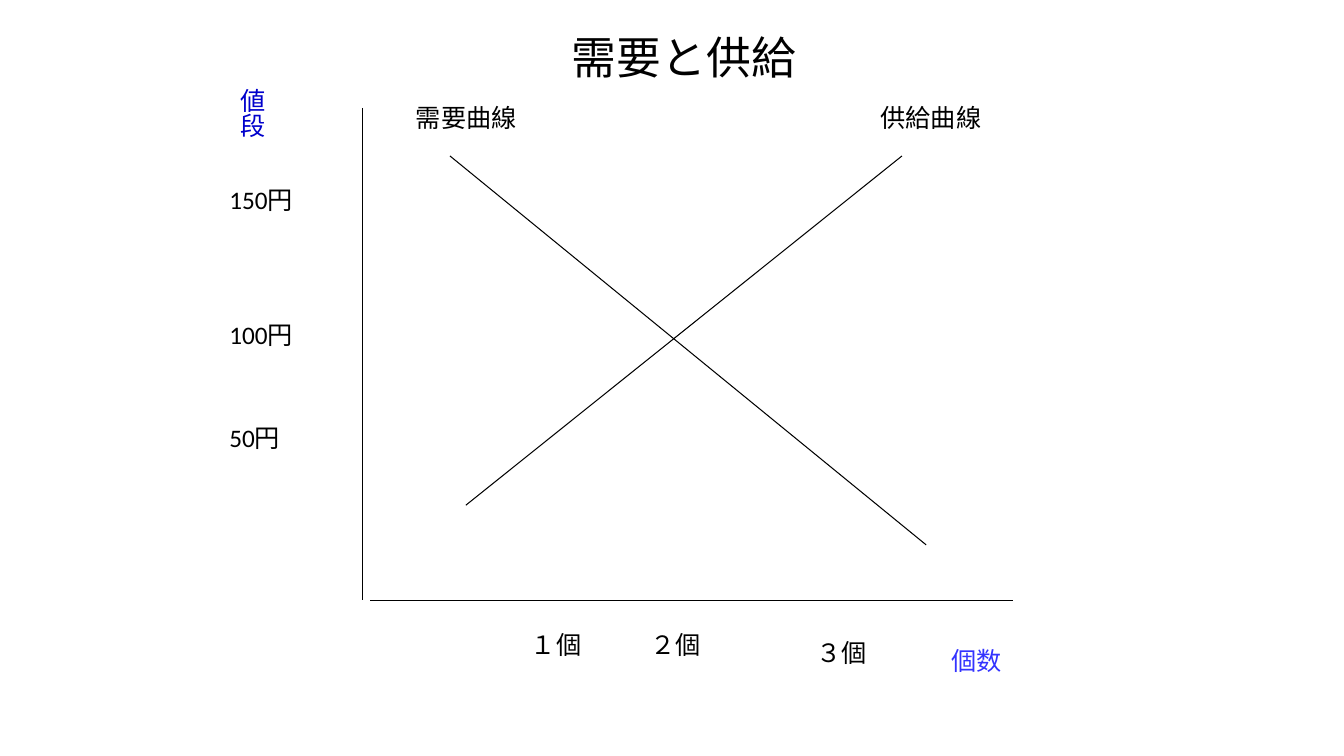
"""Build a supply and demand diagram slide."""
from lxml import etree
from pptx import Presentation
from pptx.dml.color import RGBColor
from pptx.enum.shapes import MSO_CONNECTOR
from pptx.enum.text import MSO_AUTO_SIZE, PP_ALIGN
from pptx.oxml.ns import qn
from pptx.util import Cm, Pt

STRAIGHT = MSO_CONNECTOR.STRAIGHT
FIT_SHAPE = MSO_AUTO_SIZE.SHAPE_TO_FIT_TEXT
LEFT, CENTER = PP_ALIGN.LEFT, PP_ALIGN.CENTER

COLORS = {"ink": "000000", "quantity": "3333FF", "price": "0000CC"}
FONT = "Calibri"
LABEL_HEIGHT = 1.02
PRICE_LEFT = 5.53
CURVE_LABEL_TOP = 2.46
AXIS_BOTTOM = 15.12
CURVE_TOP = 3.93

AXES = [(9.14, 2.72, 9.14, AXIS_BOTTOM), (9.33, AXIS_BOTTOM, 25.53, AXIS_BOTTOM)]
CURVES = [(11.74, 12.73, 22.73, CURVE_TOP), (11.34, CURVE_TOP, 23.34, 13.73)]
PRICES = [("150円", 4.52, 3), ("100円", 7.92, 3), ("50円", 10.52, 3.2)]
QUANTITIES = [("１個", 13.13, 15.74, 2.59), ("２個", 16.14, 15.74, 3), ("３個", 20.33, 15.93, 2.59)]
CURVE_LABELS = [("需要曲線", 10.23, 7.01), ("供給曲線", 21.94, 5.79)]


def add_text(slide, text, left, top, width, height=LABEL_HEIGHT, *,
             size=18, color="ink", align=LEFT, vertical=False):
    shape = slide.shapes.add_textbox(Cm(left), Cm(top), Cm(width), Cm(height))
    frame = shape.text_frame
    frame.word_wrap = True
    frame.auto_size = FIT_SHAPE
    if vertical:
        shape.element.txBody.find(qn("a:bodyPr")).set("vert", "eaVert")
    paragraph = frame.paragraphs[0]
    paragraph.alignment = align
    run = paragraph.add_run()
    run.text = text
    run.font.name = FONT
    run.font.size = Pt(size)
    run.font.color.rgb = RGBColor.from_string(COLORS[color])


def add_line(slide, points):
    connector = slide.shapes.add_connector(STRAIGHT, *map(Cm, points))
    connector.line.color.rgb = RGBColor.from_string(COLORS["ink"])
    connector.line.width = Pt(0.75)
    etree.SubElement(connector.element.spPr, qn("a:effectLst"))


def main():
    presentation = Presentation()
    presentation.slide_width, presentation.slide_height = Cm(33.87), Cm(19.05)
    slide = presentation.slides.add_slide(presentation.slide_layouts[6])

    for points in AXES + CURVES:
        add_line(slide, points)
    add_text(slide, "個数", 23.72, 16.13, 4.39, color="quantity")
    add_text(slide, "値段", 5.59, 1.98, 1.27, 2.01, color="price", vertical=True)
    for text, left, top, width in QUANTITIES:
        add_text(slide, text, left, top, width)
    for text, top, width in PRICES:
        add_text(slide, text, PRICE_LEFT, top, width)
    for text, left, width in CURVE_LABELS:
        add_text(slide, text, left, CURVE_LABEL_TOP, width)
    add_text(slide, "需要と供給", 13.14, 0.62, 8.2, 1.63, size=32, align=CENTER)
    presentation.save("out.pptx")


if __name__ == "__main__":
    main()
